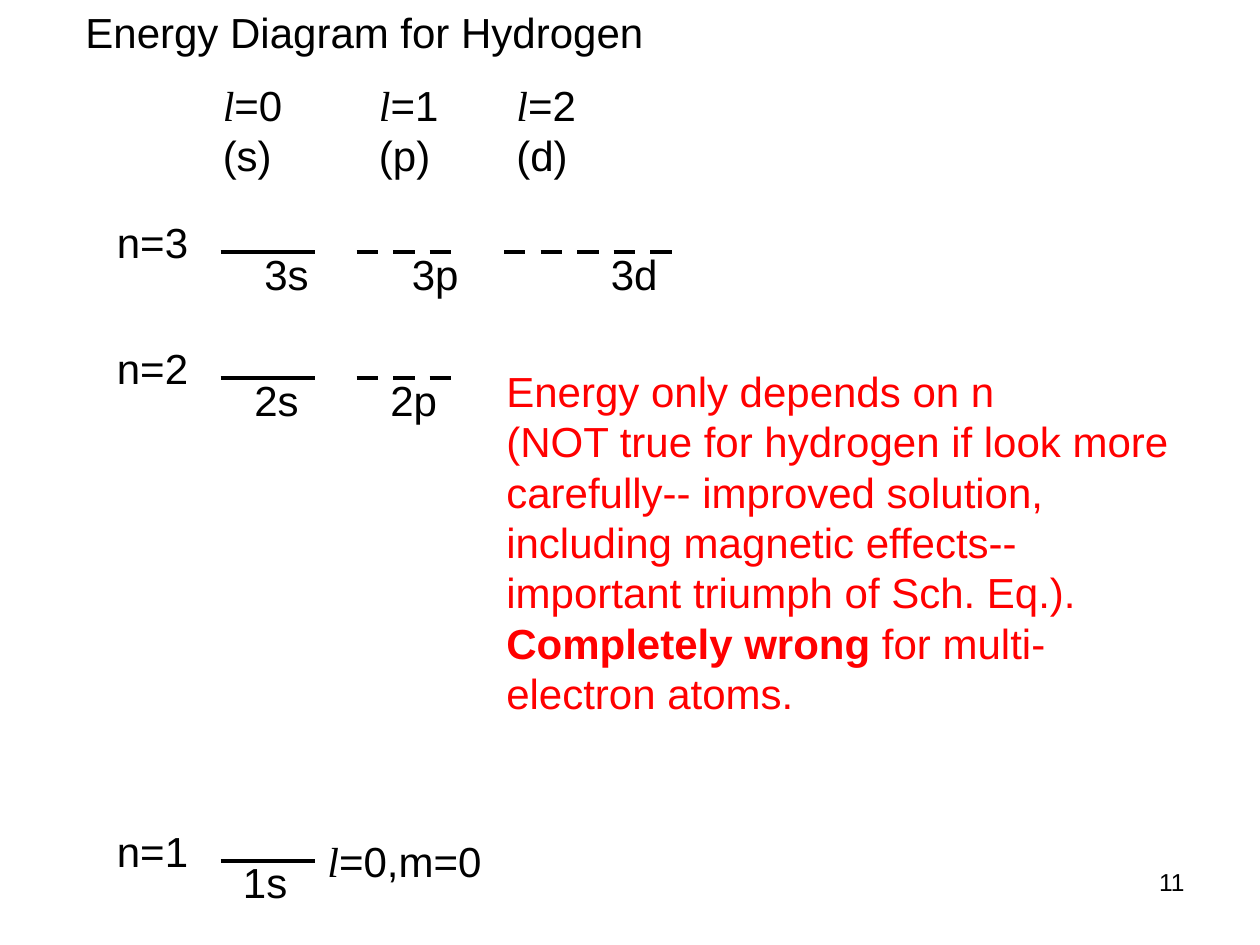
from lxml.etree import SubElement
from pptx import Presentation
from pptx.dml.color import RGBColor
from pptx.enum.shapes import MSO_CONNECTOR
from pptx.enum.text import MSO_AUTO_SIZE, PP_ALIGN
from pptx.oxml.ns import qn
from pptx.util import Inches, Pt

# Content: a paragraph is a list of (text, style) runs
COLORS = {"ink": "000000", "note": "FF0000"}
TITLE = "Energy Diagram for Hydrogen"
PAGE_NUMBER = "11"
SUBSHELLS = [("=0", "(s)", 1.67), ("=1", "(p)", 2.91), ("=2", "(d)", 4)]
LEVELS = [("n=1", 6.83), ("n=2", 3), ("n=3", 2)]
# name, level, left of label, first orbital, number of orbitals, orbital length
ORBITALS = [
    ("1s", "n=1", 1.83, 1.75, 1, 0.75),
    ("2s", "n=2", 1.92, 1.75, 1, 0.75),
    ("2p", "n=2", 3, 2.83, 3, 0.17),
    ("3s", "n=3", 2, 1.75, 1, 0.75),
    ("3p", "n=3", 3.17, 2.83, 3, 0.17),
    ("3d", "n=3", 4.75, 4, 5, 0.17),
]
QUANTUM_L = ("l", "symbol")
NOTE = [
    [("Energy only depends on n", "")],
    [("(NOT true for hydrogen if look more carefully-- improved solution, "
      "including magnetic effects-- important triumph of Sch. Eq.).", "")],
    [("Completely wrong", "bold"), (" for multi-electron atoms.", "")],
]

# Grid, in inches
ORBITAL_PITCH = 0.29
LINE_HEIGHT = 0.5
LABEL_WIDTHS = {"s": 0.55, "p": 0.6, "d": 0.6}

deck = Presentation()
deck.slide_width, deck.slide_height = Inches(10), Inches(7.5)
slide = deck.slides.add_slide(deck.slide_layouts[6])


def add_text(paragraphs, left, top, width, height=LINE_HEIGHT, size=24,
             color="ink", wrap=False, align=PP_ALIGN.LEFT):
    if isinstance(paragraphs, str):
        paragraphs = [[(paragraphs, "")]]
    frame = slide.shapes.add_textbox(*map(Inches, (left, top, width, height))).text_frame
    frame.word_wrap = wrap
    frame.auto_size = MSO_AUTO_SIZE.SHAPE_TO_FIT_TEXT
    for index, pieces in enumerate(paragraphs):
        paragraph = frame.add_paragraph() if index else frame.paragraphs[0]
        paragraph.alignment = align
        for words, style in pieces:
            run = paragraph.add_run()
            run.text = words
            run.font.name = "Times New Roman" if style == "symbol" else "Arial"
            run.font.size = Pt(size)
            run.font.italic = style == "symbol"
            run.font.bold = style == "bold"
            run.font.color.rgb = RGBColor.from_string(COLORS[color])


def add_orbital(left, top, length):
    orbital = slide.shapes.add_connector(
        MSO_CONNECTOR.STRAIGHT, *map(Inches, (left, top, left + length, top)))
    orbital.line.color.rgb = RGBColor.from_string(COLORS["ink"])
    orbital.line.width = Pt(2.25)
    SubElement(orbital._element.spPr, qn("a:effectLst"))


# Title and page number
add_text(TITLE, 0.58, 0, 4.63)
add_text(PAGE_NUMBER, 7.17, 6.83, 2.33, 0.52, size=14, wrap=True, align=PP_ALIGN.RIGHT)

# Column heads
for value, letter, left in SUBSHELLS:
    add_text([[QUANTUM_L, (value, "")], [(letter, "")]], left, 0.58, 0.67, 0.9)

# Energy levels
for level, energy in LEVELS:
    add_text(level, 0.83, energy - 0.33, 0.77)

# Orbitals with their labels
energies = dict(LEVELS)
for name, level, label_left, first, count, length in ORBITALS:
    energy = energies[level]
    for index in range(count):
        add_orbital(first + index * ORBITAL_PITCH, energy, length)
    add_text(name, label_left, energy - 0.08, LABEL_WIDTHS[name[-1]])

# Ground state and remark
add_text([[QUANTUM_L, ("=0,m=0", "")]], 2.5, 6.58, 1.42)
add_text(NOTE, 3.92, 2.85, 5.58, 2.93, color="note", wrap=True)

deck.save("out.pptx")
